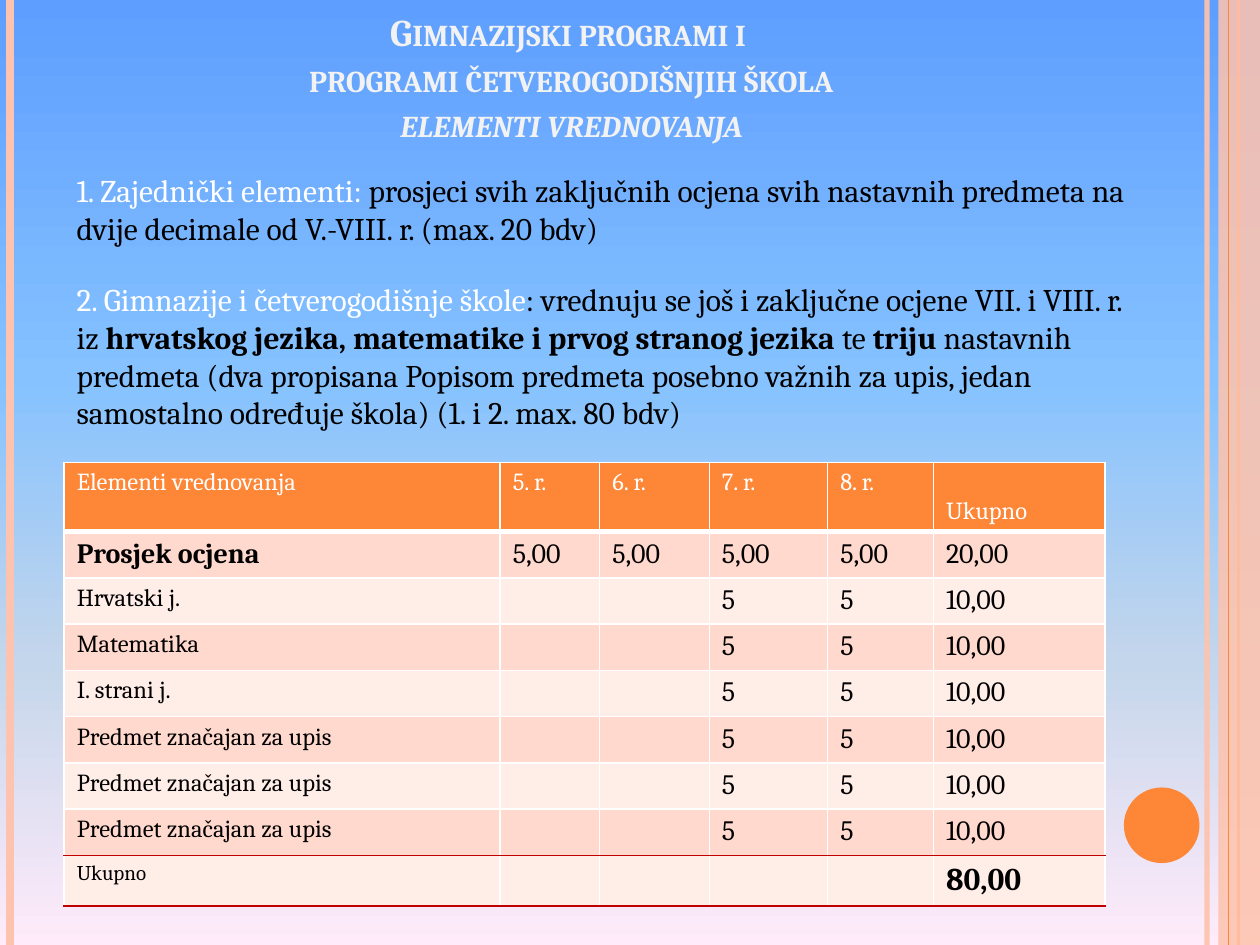
from copy import deepcopy
from dataclasses import dataclass

from lxml import etree
from pptx import Presentation
from pptx.dml.color import RGBColor
from pptx.enum import shapes, text
from pptx.oxml import ns
from pptx.util import Inches, Pt


@dataclass(frozen=True)
class Theme:
    font: str = "Cambria"
    orange: str = "FE8637"
    peach: str = "FEC3AE"
    bands: tuple = ("FFD9CE", "FFEDE8")
    white: str = "FFFFFF"
    black: str = "000000"
    title: str = "F2F2F2"
    red: str = "C00000"
    background: tuple = ((0, "5E9EFF"), (40, "85C2FF"), (70, "C4D6EB"), (100, "FFEBFA"))
    title_size: float = 21.6
    body_size: float = 18
    value_size: float = 16
    label_size: float = 14
    small_size: float = 12


THEME = Theme()


def set_attributes(target, values):
    for name, value in values.items():
        setattr(target, name, value)


def add_run(paragraph, wording, size, color, **format_values):
    run = paragraph.add_run()
    run.text = wording
    set_attributes(run.font, {"name": THEME.font, "size": Pt(size), **format_values})
    run.font.color.rgb = RGBColor.from_string(color)
    return run


def add_text_frame(slide, box, **format_values):
    frame = slide.shapes.add_textbox(*map(Inches, box)).text_frame
    set_attributes(frame, {"word_wrap": True, **format_values})
    return frame


def set_alpha(element, percent):
    for color in element.iter(ns.qn("a:srgbClr")):
        etree.SubElement(color, ns.qn("a:alpha")).set("val", str(percent * 1000))


def paint_background(slide):
    fill = slide.background.fill
    fill.gradient()
    fill.gradient_angle = 270
    stops = slide.background._cSld.find(".//" + ns.qn("a:gsLst"))
    template = deepcopy(stops[0])
    for stop in list(stops):
        stops.remove(stop)
    for position, color in THEME.background:
        stop = deepcopy(template)
        stop.set("pos", str(position * 1000))
        for child in list(stop):
            stop.remove(child)
        etree.SubElement(stop, ns.qn("a:srgbClr")).set("val", color)
        stops.append(stop)


def add_stripe(slide, x, color, width, height, alpha=None):
    line = slide.shapes.add_connector(
        shapes.MSO_CONNECTOR.STRAIGHT, Inches(x), 0, Inches(x), Inches(height))
    line.line.color.rgb = RGBColor.from_string(color)
    line.line.width = Pt(width)
    if alpha:
        set_alpha(line._element.spPr, alpha)
    etree.SubElement(line._element.spPr, ns.qn("a:effectLst"))


def add_solid(slide, kind, box, color, alpha=None):
    shape = slide.shapes.add_shape(kind, *map(Inches, box))
    shape.shadow.inherit = False
    shape.fill.solid()
    shape.fill.fore_color.rgb = RGBColor.from_string(color)
    shape.line.fill.background()
    if alpha:
        set_alpha(shape._element.spPr, alpha)


def add_frame_decoration(slide, box):
    left, top, width, height = box
    right = left + width
    add_stripe(slide, right - 0.42, THEME.peach, 3, height, 93)
    add_stripe(slide, left + 0.08, THEME.peach, 4.5, height)
    add_stripe(slide, right - 0.17, THEME.orange, 1.5, height)
    add_solid(slide, shapes.MSO_SHAPE.RECTANGLE,
              (right - 0.33, top, 0.33, height), THEME.peach, 87)
    add_stripe(slide, right - 0.25, THEME.orange, 0.75, height)
    add_solid(slide, shapes.MSO_SHAPE.OVAL,
              (right - 1.08, top + height - 1.25, 0.6, 0.6), THEME.orange)


def add_title(slide, box):
    frame = add_text_frame(slide, box, vertical_anchor=text.MSO_ANCHOR.BOTTOM)
    paragraph = frame.paragraphs[0]
    paragraph.alignment = text.PP_ALIGN.CENTER
    lines = (("Gimnazijski programi i ", False),
             ("programi četverogodišnjih škola", False),
             ("elementi vrednovanja", True))
    for index, (wording, italic) in enumerate(lines):
        if index:
            paragraph.add_line_break()
        run = add_run(paragraph, wording, THEME.title_size, THEME.title,
                      bold=True, italic=italic)
        run.font._element.set("cap", "small")
    for line_break in paragraph._p.findall(ns.qn("a:br")):
        etree.SubElement(line_break, ns.qn("a:rPr")).set("sz", str(int(THEME.title_size * 100)))


def add_explanation(slide, box):
    frame = add_text_frame(slide, box)
    paragraphs = (
        (("1. Zajednički elementi: ", THEME.white, False),
         ("prosjeci svih zaključnih ocjena svih nastavnih predmeta na dvije decimale "
          "od V.-VIII. r. (max. 20 bdv)", THEME.black, False)),
        (("2. Gimnazije i četverogodišnje škole", THEME.white, False),
         (": vrednuju se još i zaključne ocjene VII. i VIII. r. iz ", THEME.black, False),
         ("hrvatskog jezika, matematike i prvog stranog jezika ", THEME.black, True),
         ("te ", THEME.black, False),
         ("triju", THEME.black, True),
         (" nastavnih predmeta (dva propisana Popisom predmeta posebno važnih za upis, "
          "jedan samostalno određuje škola) (1. i 2. max. 80 bdv)", THEME.black, False)))
    for index, runs in enumerate(paragraphs):
        paragraph = frame.add_paragraph() if index else frame.paragraphs[0]
        paragraph.space_before = Pt(19 if index else 0)
        for wording, color, bold in runs:
            add_run(paragraph, wording, THEME.body_size, color, bold=bold)


def set_borders(cell, top, bottom):
    properties = cell._tc.get_or_add_tcPr()
    side = (THEME.white, 1)
    for tag, (color, width) in (("lnL", side), ("lnR", side), ("lnT", top), ("lnB", bottom)):
        line = etree.SubElement(properties, ns.qn("a:" + tag), w=str(Pt(width)))
        fill = etree.SubElement(line, ns.qn("a:solidFill"))
        etree.SubElement(fill, ns.qn("a:srgbClr")).set("val", color)


def add_score_table(slide, box):
    subjects = ["Hrvatski j.", "Matematika", "I. strani j."] + ["Predmet značajan za upis"] * 3
    rows = [["Elementi vrednovanja", "5. r.", "6. r.", "7. r.", "8. r.", "Ukupno"],
            ["Prosjek ocjena"] + ["5,00"] * 4 + ["20,00"],
            *([subject, "", "", "5", "5", "10,00"] for subject in subjects),
            ["Ukupno", "", "", "", "", "80,00"]]
    widths = (3.46, 0.79, 0.87, 0.94, 0.84, 1.36)
    heights = [0.55] + [0.32] * 7 + [0.35]
    last = len(rows) - 1
    table = slide.shapes.add_table(len(rows), len(widths), *map(Inches, box)).table
    set_attributes(table, {"first_row": False, "horz_banding": False})
    for column, width in zip(table.columns, widths):
        column.width = Inches(width)

    thin, thick, total_rule = (THEME.white, 1), (THEME.white, 3), (THEME.red, 1)
    for r, values in enumerate(rows):
        table.rows[r].height = Inches(heights[r])
        fill = THEME.bands[(r - 1) % 2] if r else THEME.orange
        top = total_rule if r == last else thin
        bottom = total_rule if r >= last - 1 else thin if r else thick
        for c, wording in enumerate(values):
            cell = table.cell(r, c)
            set_borders(cell, top, bottom)
            cell.fill.solid()
            cell.fill.fore_color.rgb = RGBColor.from_string(fill)
            size = THEME.value_size
            if r == 0 or (c == 0 and 1 < r < last):
                size = THEME.label_size
            elif r == last:
                size = THEME.body_size if c else THEME.small_size
            paragraph = cell.text_frame.paragraphs[0]
            if wording:
                add_run(paragraph, wording, size, THEME.black if r else THEME.white,
                        bold=(r, c) in ((1, 0), (last, 5)))
            else:
                paragraph._p.get_or_add_endParaRPr().set("sz", str(size * 100))
    # The total heading sits at the foot of the header row
    table.cell(0, 5).vertical_anchor = text.MSO_ANCHOR.BOTTOM


def main():
    presentation = Presentation()
    set_attributes(presentation, {"slide_width": Inches(10), "slide_height": Inches(7.5)})
    slide = presentation.slides.add_slide(presentation.slide_layouts[6])
    paint_background(slide)
    add_frame_decoration(slide, (0, 0, 10, 7.5))
    add_title(slide, (0.28, 0.6, 8.51, 0.6))
    add_score_table(slide, (0.51, 3.67, 8.27, 3.53))
    add_explanation(slide, (0.51, 1.31, 8.66, 2.19))
    presentation.save("out.pptx")


if __name__ == "__main__":
    main()
